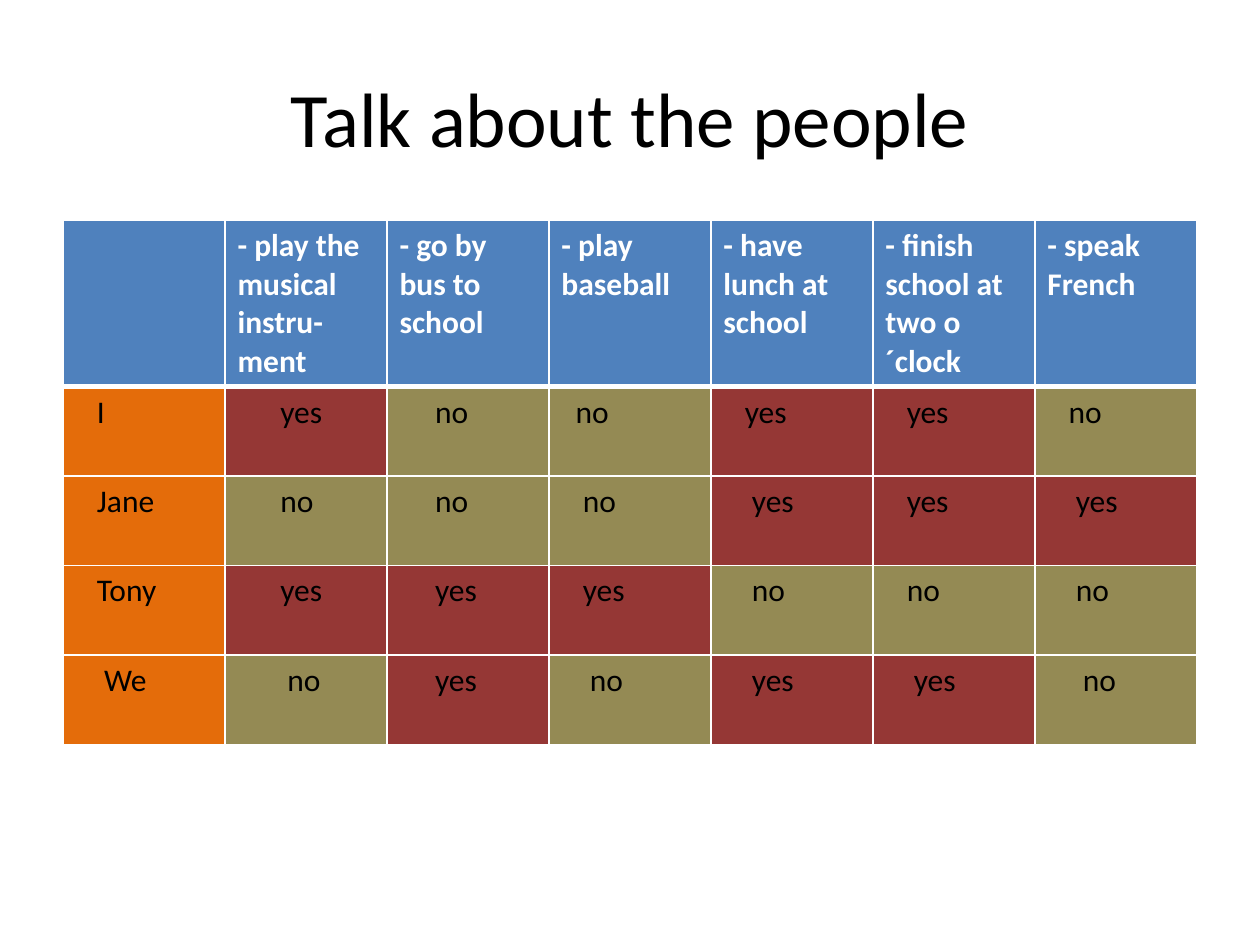
from dataclasses import dataclass

from lxml import etree
from pptx import Presentation, util as u
from pptx.dml.color import RGBColor
from pptx.enum import text
from pptx.oxml import ns


@dataclass(frozen=True)
class Theme:
    font: str = "Calibri"
    title_size: int = 44
    cell_size: int = 18
    ink: str = "000000"
    paper: str = "FFFFFF"
    header: str = "4F81BD"
    person: str = "E46C0A"
    yes: str = "953735"
    no: str = "948A54"
    line: float = 1
    header_line: float = 3


@dataclass(frozen=True)
class Person:
    name: str
    answers: str
    indents: tuple  # steps of one space width, name first


THEME = Theme()
WIDTH, HEIGHT = u.Inches(10), u.Inches(7.5)
MARGIN = WIDTH // 20
CONTENT_WIDTH = WIDTH - 2 * MARGIN
CELL_MARGIN = u.Inches(0.1)
INDENT_STEP = u.Pt(4.07)
HEADER_HEIGHT, ROW_HEIGHT = u.Inches(1.32), u.Inches(0.71)

ACTIVITIES = (
    "- play the musical instru-ment",
    "- go by bus to school",
    "- play baseball",
    "- have lunch at school",
    "- finish school at two o´clock",
    "- speak French",
)
PEOPLE = (
    Person("I", "yes no no yes yes no", (3, 6, 5, 2, 3, 3, 3)),
    Person("Jane", "no no no yes yes yes", (3, 6, 5, 3, 4, 3, 4)),
    Person("Tony", "yes yes yes no no no", (3, 6, 5, 3, 4, 3, 4)),
    Person("We", "no yes no yes yes no", (4, 7, 5, 4, 4, 4, 5)),
)


def add_run(paragraph, words: str, size: int, color: str, bold: bool = False) -> None:
    run = paragraph.add_run()
    run.text = words
    run.font.name = THEME.font
    run.font.size = u.Pt(size)
    run.font.bold = bold
    run.font.color.rgb = RGBColor.from_string(color)


def set_borders(cell, top: float, bottom: float) -> None:
    """Draw the four cell edges; they must precede the fill in the XML."""
    properties = cell._tc.get_or_add_tcPr()
    widths = {"lnL": THEME.line, "lnR": THEME.line, "lnT": top, "lnB": bottom}
    for position, (edge, width) in enumerate(widths.items()):
        line = etree.Element(ns.qn(f"a:{edge}"), w=str(u.Pt(width)))
        fill = etree.SubElement(line, ns.qn("a:solidFill"))
        etree.SubElement(fill, ns.qn("a:srgbClr"), val=THEME.paper)
        properties.insert(position, line)


def fill_cell(cell, words: str, fill: str, color: str, indent: int = 0,
              bold: bool = False, top: float = THEME.line,
              bottom: float = THEME.line) -> None:
    cell.fill.solid()
    cell.fill.fore_color.rgb = RGBColor.from_string(fill)
    set_borders(cell, top, bottom)
    cell.margin_left = CELL_MARGIN + indent * INDENT_STEP
    if words:
        add_run(cell.text_frame.paragraphs[0], words, THEME.cell_size, color, bold)


def add_title(slide, words: str) -> None:
    box = slide.shapes.add_textbox(MARGIN, HEIGHT * 0.04, CONTENT_WIDTH, HEIGHT / 6)
    frame = box.text_frame
    frame.word_wrap = True
    frame.vertical_anchor = text.MSO_ANCHOR.MIDDLE
    frame.paragraphs[0].alignment = text.PP_ALIGN.CENTER
    add_run(frame.paragraphs[0], words, THEME.title_size, THEME.ink)


def add_answer_table(slide) -> None:
    columns = len(ACTIVITIES) + 1
    height = HEADER_HEIGHT + len(PEOPLE) * ROW_HEIGHT
    table = slide.shapes.add_table(len(PEOPLE) + 1, columns, MARGIN, u.Inches(1.75),
                                   CONTENT_WIDTH, height).table
    for row in table.rows:
        row.height = ROW_HEIGHT
    table.rows[0].height = HEADER_HEIGHT

    for column, activity in enumerate(("", *ACTIVITIES)):
        fill_cell(table.cell(0, column), activity, THEME.header, THEME.paper,
                  bold=True, bottom=THEME.header_line)

    answer_fills = {"yes": THEME.yes, "no": THEME.no}
    for row, person in enumerate(PEOPLE, start=1):
        top = THEME.header_line if row == 1 else THEME.line
        entries = (person.name, *person.answers.split())
        for column, (words, indent) in enumerate(zip(entries, person.indents)):
            fill = answer_fills.get(words, THEME.person)
            fill_cell(table.cell(row, column), words, fill, THEME.ink, indent, top=top)


def main() -> None:
    presentation = Presentation()
    presentation.slide_width, presentation.slide_height = WIDTH, HEIGHT
    slide = presentation.slides.add_slide(presentation.slide_layouts[6])
    add_title(slide, "Talk about the people")
    add_answer_table(slide)
    presentation.save("out.pptx")


if __name__ == "__main__":
    main()
